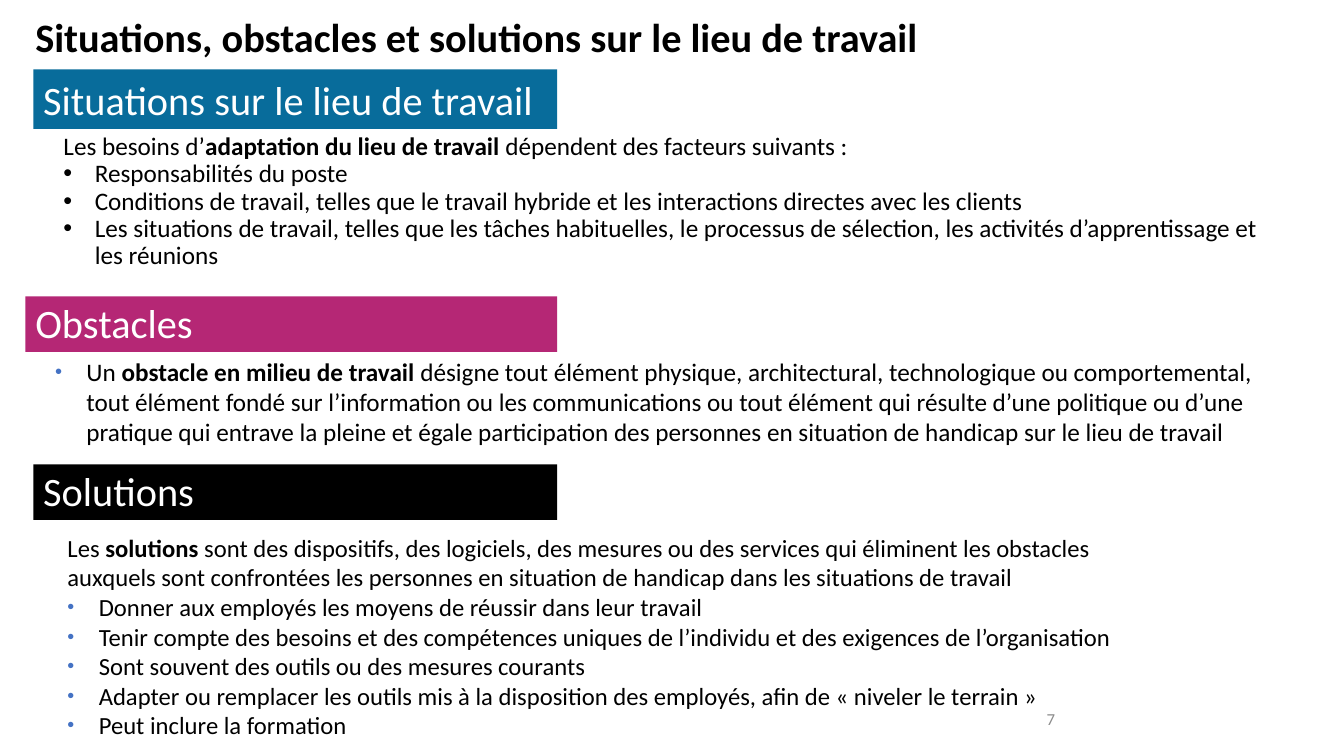
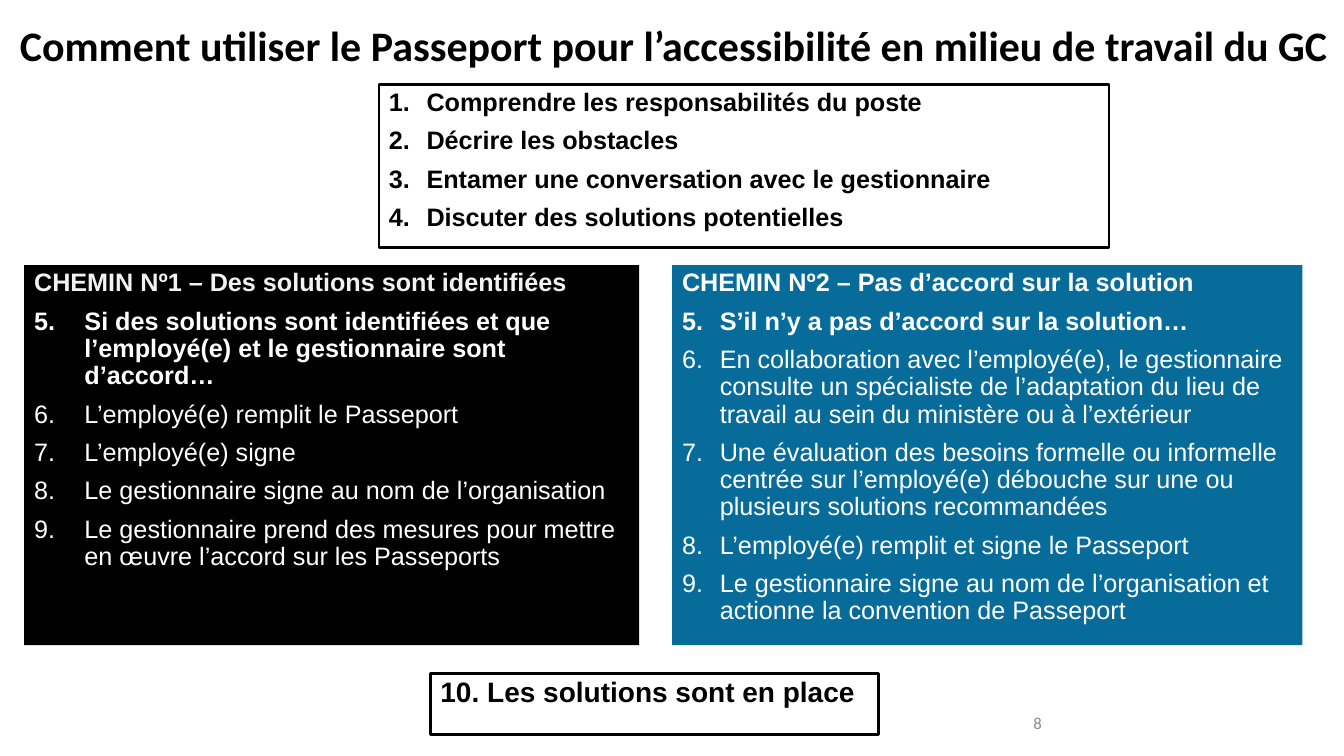
"""Build two slides on workplace situations, obstacles, solutions and the passport steps."""
import pptx
import pptx.dml.color
import pptx.enum.shapes
import pptx.enum.text
import pptx.oxml
import pptx.oxml.ns
import pptx.util
import lxml.etree

Cm = pptx.util.Cm
Pt = pptx.util.Pt
ANCHOR = pptx.enum.text.MSO_ANCHOR
ALIGN = pptx.enum.text.PP_ALIGN
BLACK, WHITE, PALE, GREY = "000000", "FFFFFF", "F2F2F2", "8C8C8C"
TEAL, PINK, BLUE = "086C9B", "B52775", "4472C4"
BODY, STEPS = "Calibri", "Arial"


def color(code):
    """Turn a hex string into a colour."""
    return pptx.dml.color.RGBColor.from_string(code)


def add_text(slide, place):
    """Add an empty wrapping text box."""
    box = slide.shapes.add_textbox(*map(Cm, place))
    box.text_frame.word_wrap = True
    return box


def add_box(slide, place, fill=None):
    """Add a filled rectangle, or an outlined one when no fill is given."""
    rect = pptx.enum.shapes.MSO_SHAPE.RECTANGLE
    box = slide.shapes.add_shape(rect, *map(Cm, place))
    box.shadow.inherit = False
    if fill:
        box.fill.solid()
        box.fill.fore_color.rgb = color(fill)
        box.line.fill.background()
    else:
        box.fill.background()
        box.line.color.rgb = color(BLACK)
        box.line.width = Pt(2)
    box.text_frame.word_wrap = True
    box.text_frame.vertical_anchor = ANCHOR.TOP
    return box


def write(box, lines, size, font=BODY, ink=BLACK, space=1.0, after=0):
    """Write one paragraph a line, with bold between asterisks."""
    frame = box.text_frame
    frame.text = "\n".join(lines)
    for para in frame.paragraphs:
        parts = para.text.split("*")
        para.text = parts[0]
        for part in parts[1:]:
            para.add_run().text = part
        para.alignment = ALIGN.LEFT
        para.line_spacing = space
        para.space_after = Pt(after)
        for spot, run in enumerate(para.runs):
            run.font.size = Pt(size)
            run.font.name = font
            run.font.color.rgb = color(ink)
            run.font.bold = (spot + len(parts) - len(para.runs)) % 2 == 1
    return frame.paragraphs


def add_mark(para, hang, tags):
    """Hang a paragraph and give it the listed bullet tags."""
    props = para._p.get_or_add_pPr()
    props.set("marL", str(Cm(hang)))
    props.set("indent", str(-Cm(hang)))
    for name, attrs in tags:
        tag = pptx.oxml.ns.qn("a:" + name)
        lxml.etree.SubElement(props, tag, attrs)
    return props


def bullet(paras, tint=None):
    """Put round bullets on paragraphs, small and tinted on request."""
    for para in paras:
        tags = [("buFont", {"typeface": "Arial"}), ("buChar", {"char": "•"})]
        if tint:
            tags.insert(0, ("buSzPct", {"val": "80000"}))
            props = add_mark(para, 0.79, [("buClr", {})])
            clr = props.find(pptx.oxml.ns.qn("a:buClr"))
            lxml.etree.SubElement(clr, pptx.oxml.ns.qn("a:srgbClr"), {"val": tint})
        add_mark(para, 0.79, tags)


def number(paras, start, hang=0.95):
    """Number paragraphs from a given start."""
    auto = {"type": "arabicPeriod", "startAt": str(start)}
    for para in paras:
        add_mark(para, hang, [("buFont", {"typeface": "+mj-lt"}), ("buAutoNum", auto)])


def add_title(slide, place, text, size):
    """Add the bold slide title."""
    box = add_text(slide, place)
    box.text_frame.vertical_anchor = ANCHOR.BOTTOM
    write(box, [f"*{text}*"], size, space=0.9)


def add_band(slide, place, text, fill):
    """Add a coloured section heading."""
    box = add_box(slide, place, fill)
    box.text_frame.vertical_anchor = ANCHOR.BOTTOM
    write(box, [text], 28.8, ink=WHITE)


def add_steps(slide, place, lines, start, fill=None, size=18):
    """Add a box of steps and return its paragraphs."""
    ink = WHITE if fill else BLACK
    paras = write(add_box(slide, place, fill), lines, size, STEPS, ink, 0.9, 8)
    return paras


def add_page(slide, left, top, text):
    """Add the page number."""
    box = add_text(slide, (left, top, 1.9, 1.02))
    box.text_frame.vertical_anchor = ANCHOR.MIDDLE
    write(box, [text], 12, ink=GREY)[0].alignment = ALIGN.RIGHT


def show_needs(slide):
    """Fill the slide on situations, obstacles and solutions."""
    add_title(slide, (0.64, 0.28, 23.6, 1.4),
              "Situations, obstacles et solutions sur le lieu de travail", 28.8)
    add_band(slide, (0.84, 1.75, 13.2, 1.5), "Situations sur le lieu de travail", TEAL)
    paras = write(add_text(slide, (1.35, 3.25, 31.1, 4.2)), [
        "Les besoins d’*adaptation du lieu de travail *dépendent des facteurs suivants :",
        "Responsabilités du poste",
        "Conditions de travail, telles que le travail hybride et les interactions "
        "directes avec les clients",
        "Les situations de travail, telles que les tâches habituelles, le processus de "
        "sélection, les activités d’apprentissage et les réunions",
    ], 18, space=0.9)
    bullet(paras[1:])
    add_band(slide, (0.64, 7.47, 13.4, 1.4), "Obstacles", PINK)
    paras = write(add_text(slide, (1.14, 8.85, 31.1, 3.2)), [
        "Un *obstacle en milieu de travail *désigne tout élément physique, architectural, "
        "technologique ou comportemental, tout élément fondé sur l’information ou les "
        "communications ou tout élément qui résulte d’une politique ou d’une pratique qui "
        "entrave la pleine et égale participation des personnes en situation de handicap "
        "sur le lieu de travail",
    ], 18)
    bullet(paras, BLUE)
    add_band(slide, (0.84, 11.7, 13.2, 1.4), "Solutions", BLACK)
    paras = write(add_text(slide, (1.45, 13.3, 27.8, 5.92)), [
        "Les *solutions* sont des dispositifs, des logiciels, des mesures ou des services "
        "qui éliminent les obstacles auxquels sont confrontées les personnes en situation "
        "de handicap dans les situations de travail",
        "Donner aux employés les moyens de réussir dans leur travail",
        "Tenir compte des besoins et des compétences uniques de l’individu et des "
        "exigences de l’organisation",
        "Sont souvent des outils ou des mesures courants",
        "Adapter ou remplacer les outils mis à la disposition des employés, afin de "
        "« niveler le terrain »",
        "Peut inclure la formation",
    ], 17.6)
    bullet(paras[1:], BLUE)
    add_page(slide, 24.94, 17.6, "7")


def show_steps(slide):
    """Fill the slide on how to use the passport."""
    add_title(slide, (0.25, 0.53, 34, 1.37),
              "Comment utiliser le Passeport pour l’accessibilité en milieu de travail du GC", 30)
    paras = add_steps(slide, (9.55, 2.13, 18.4, 4.1), [
        "*Comprendre les responsabilités du poste*",
        "*Décrire les obstacles*",
        "*Entamer une conversation avec le gestionnaire*",
        "*Discuter des solutions potentielles*",
    ], 1)
    number(paras, 1)
    paras = add_steps(slide, (0.61, 6.68, 15.5, 9.58), [
        "*CHEMIN Nº1 – Des solutions sont identifiées*",
        "*Si des solutions sont identifiées et que l’employé(e) et le gestionnaire sont "
        "d’accord…*",
        "L’employé(e) remplit le Passeport",
        "L’employé(e) signe",
        "Le gestionnaire signe au nom de l’organisation",
        "Le gestionnaire prend des mesures pour mettre en œuvre l’accord sur les Passeports",
    ], 5, BLACK)
    for run in paras[0].runs:
        run.font.color.rgb = color(PALE)
    number(paras[1:], 5, 1.27)
    paras = add_steps(slide, (16.94, 6.68, 15.88, 9.58), [
        "*CHEMIN Nº2 – Pas d’accord sur la solution*",
        "*S’il n’y a pas d’accord sur la solution…*",
        "En collaboration avec l’employé(e), le gestionnaire consulte un spécialiste de "
        "l’adaptation du lieu de travail au sein du ministère ou à l’extérieur",
        "Une évaluation des besoins formelle ou informelle centrée sur l’employé(e) "
        "débouche sur une ou plusieurs solutions recommandées",
        "L’employé(e) remplit et signe le Passeport",
        "Le gestionnaire signe au nom de l’organisation et actionne la convention de "
        "Passeport",
    ], 5, TEAL)
    number(paras[1:], 5)
    paras = add_steps(slide, (10.85, 16.97, 11.3, 1.55),
                      ["* Les solutions sont en place*"], 10, size=20)
    number(paras, 10)
    add_page(slide, 24.61, 17.7, "8")


def main():
    """Build and save the deck."""
    deck = pptx.Presentation()
    deck.slide_width, deck.slide_height = Cm(33.87), Cm(19.05)
    for show in (show_needs, show_steps):
        show(deck.slides.add_slide(deck.slide_layouts[6]))
    deck.save("out.pptx")


if __name__ == "__main__":
    main()
